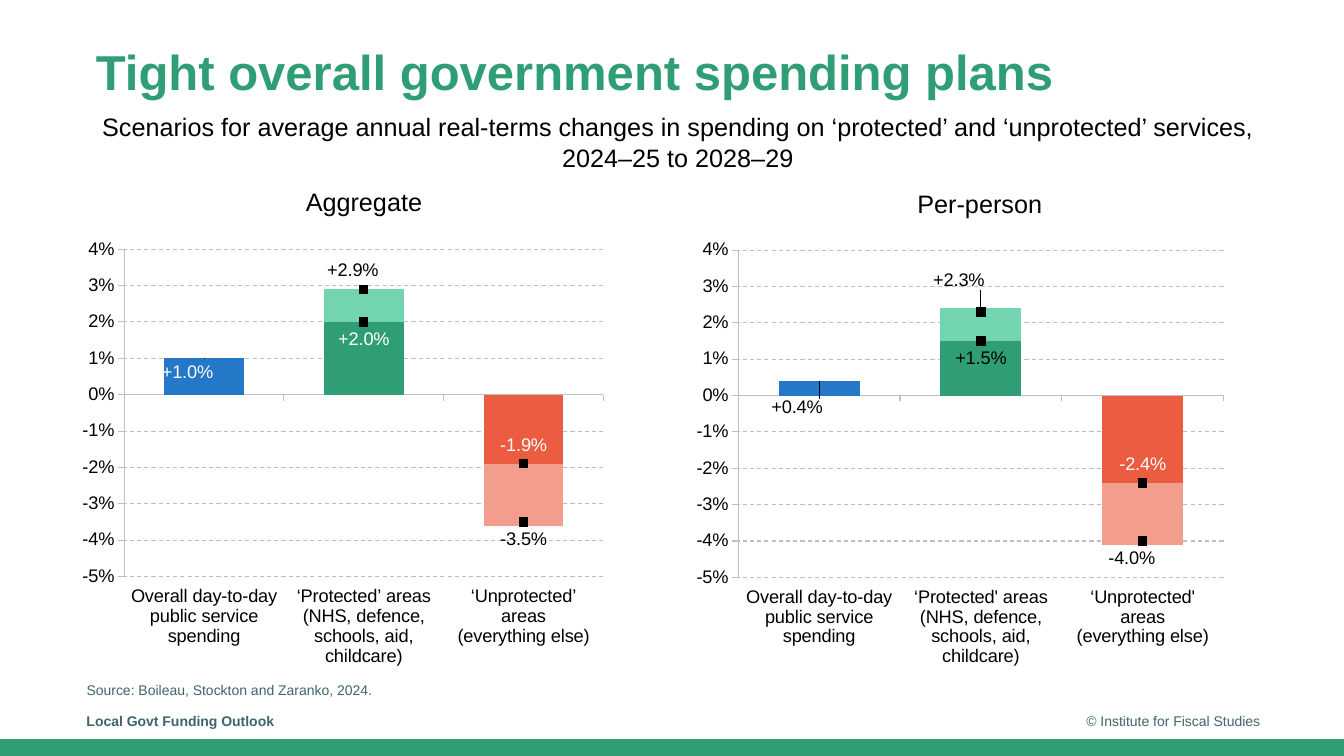
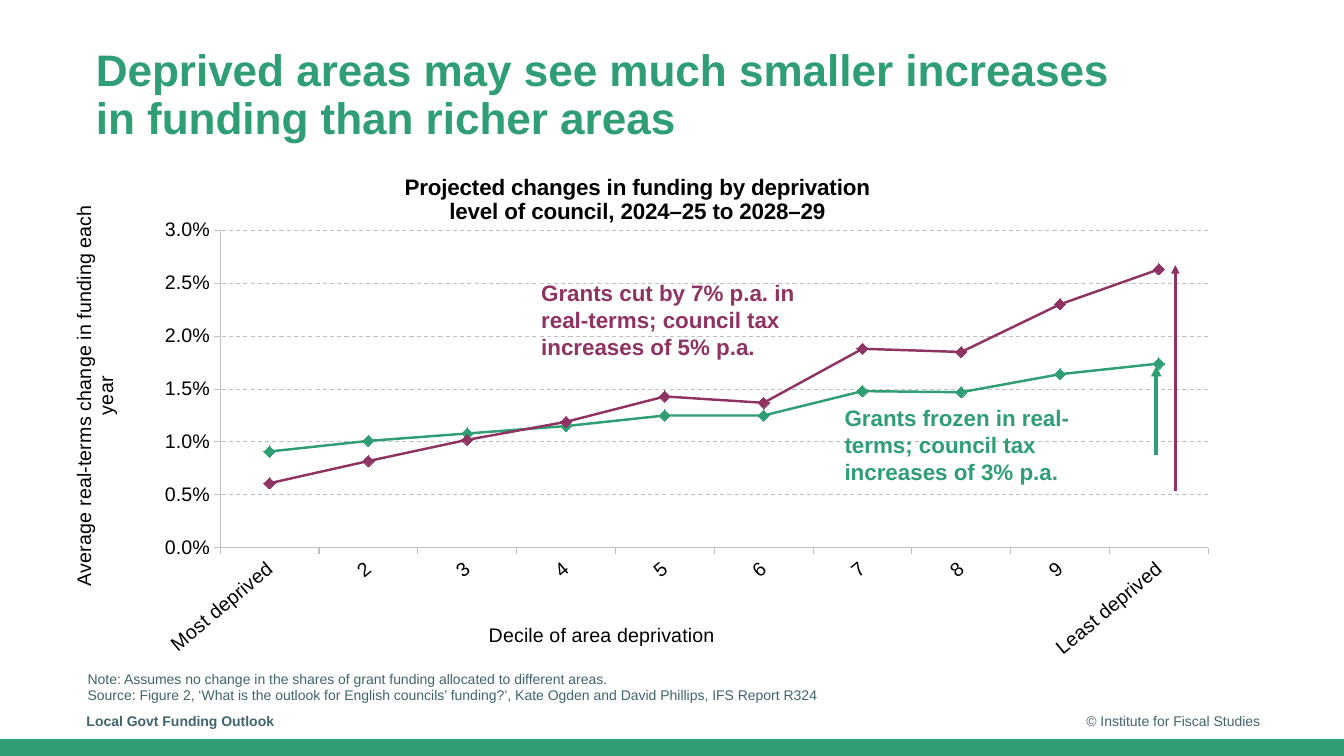
from lxml import etree
from pptx import Presentation
from pptx.chart.data import CategoryChartData
from pptx.dml.color import RGBColor
from pptx.enum.chart import (XL_CHART_TYPE, XL_LABEL_POSITION, XL_MARKER_STYLE,
                             XL_TICK_LABEL_POSITION, XL_TICK_MARK)
from pptx.enum.dml import MSO_LINE
from pptx.enum.shapes import MSO_CONNECTOR, MSO_SHAPE
from pptx.enum.text import MSO_ANCHOR, MSO_AUTO_SIZE, PP_ALIGN
from pptx.oxml import parse_xml
from pptx.oxml.ns import nsdecls, qn
from pptx.util import Inches, Pt

STACKED, LINES = XL_CHART_TYPE.COLUMN_STACKED, XL_CHART_TYPE.LINE_MARKERS
ABOVE, BELOW = XL_LABEL_POSITION.ABOVE, XL_LABEL_POSITION.BELOW
SQUARE, DIAMOND, NO_MARKER = XL_MARKER_STYLE.SQUARE, XL_MARKER_STYLE.DIAMOND, XL_MARKER_STYLE.NONE
LOW, OUTSIDE, DASH = XL_TICK_LABEL_POSITION.LOW, XL_TICK_MARK.OUTSIDE, MSO_LINE.DASH
STRAIGHT, RECT = MSO_CONNECTOR.STRAIGHT, MSO_SHAPE.RECTANGLE
TOP, MIDDLE, FIXED = MSO_ANCHOR.TOP, MSO_ANCHOR.MIDDLE, MSO_AUTO_SIZE.NONE
LEFT, CENTER, RIGHT = PP_ALIGN.LEFT, PP_ALIGN.CENTER, PP_ALIGN.RIGHT

FONT = "Arial"
GREEN, PURPLE, SLATE = "309E75", "8F3363", "40646D"
BLUE, ORANGE, MINT, SALMON = "2478C7", "EB5C40", "73D4B0", "F39D8C"
BLACK, WHITE, GREY = "000000", "FFFFFF", "BFBFBF"
W, H = Inches(13.33), Inches(7.5)


def rgb(c):
    return RGBColor.from_string(c)


def box(x, y, w, h):
    """Percent shares of the slide as left, top, width, height."""
    return [round(v * side / 100) for v, side in ((x, W), (y, H), (w, W), (h, H))]


def paint(fill, c):
    fill.solid()
    fill.fore_color.rgb = rgb(c)


def style_font(font, size, color=BLACK, bold=False):
    font.name, font.size, font.bold = FONT, Pt(size), bold
    font.color.rgb = rgb(color)


def write(tf, text, size, color=BLACK, bold=False, align=None, spacing=None):
    for i, line in enumerate(text.split("\n")):
        p = tf.add_paragraph() if i else tf.paragraphs[0]
        p.text = line
        if align is not None:
            p.alignment = align
        if spacing is not None:
            p.line_spacing = spacing
        for r in p.runs:
            style_font(r.font, size, color, bold)


def add_text(s, area, text, size, anchor=TOP, wrap=True, **fmt):
    tf = s.shapes.add_textbox(*box(*area)).text_frame
    tf.word_wrap, tf.vertical_anchor = wrap, anchor
    write(tf, text, size, **fmt)


def add_band(s, layout):
    sp = s.shapes.add_shape(RECT, *box(0, 97.77, 100, 2.23))
    sp.shadow.inherit = False
    paint(sp.fill, GREEN)
    sp.line.fill.background()
    layout.shapes.element.append(sp.element)


def add_slide(prs, layout, title, size):
    s = prs.slides.add_slide(layout)
    sp = s.shapes.title
    sp.left, sp.top, sp.width, sp.height = box(6.38, 5.73, 79.4, 8.4)
    tf = sp.text_frame
    tf.word_wrap, tf.auto_size, tf.vertical_anchor = True, FIXED, TOP
    write(tf, title, size, color=GREEN, bold=True, align=LEFT, spacing=0.9)
    add_text(s, (5.7, 92.67, 66.3, 5.33), "Local Govt Funding Outlook", 10,
             anchor=MIDDLE, color=SLATE, bold=True)
    add_text(s, (72, 92.67, 22.5, 5.33), "© Institute for Fiscal Studies", 10,
             anchor=MIDDLE, color=SLATE, align=RIGHT)
    return s


def add_arrow(s, x, y1, y2, color, width):
    left, top, _, rise = box(x, y1, 0, y2)
    c = s.shapes.add_connector(STRAIGHT, left, top, left, rise)
    c.line.color.rgb, c.line.width = rgb(color), Pt(width)
    ln = c.element.xpath(".//a:ln")[0]
    etree.SubElement(ln, qn("a:tailEnd"), type="triangle")
    etree.SubElement(ln.getparent(), qn("a:effectLst"))


def place(parent, index=1, target=None, mode="edge", **shares):
    for old in parent.findall(qn("c:layout")):
        parent.remove(old)
    layout = parse_xml(f"<c:layout {nsdecls('c')}><c:manualLayout/></c:layout>")
    values = {"layoutTarget": target, "xMode": mode, "yMode": mode, **shares}
    for tag, value in values.items():
        if value is not None:
            etree.SubElement(layout[0], qn(f"c:{tag}"), val=str(value))
    parent.insert(index, layout)


def style_axis(axis, size):
    axis.major_tick_mark = OUTSIDE
    axis.format.line.color.rgb, axis.format.line.width = rgb(GREY), Pt(0.75)
    style_font(axis.tick_labels.font, size)


def add_chart(s, kind, area, cats, series, plot, size, scale, fmt):
    data = CategoryChartData()
    data.categories = cats
    for i, values in enumerate(series, 1):
        data.add_series(f"Series {i}", values)
    chart = s.shapes.add_chart(kind, *box(*area), data).chart
    chart.has_legend = chart.has_title = False
    chart.plots[0].vary_by_categories = False
    style_font(chart.font, size)
    cat, val = chart.category_axis, chart.value_axis
    for axis in (cat, val):
        style_axis(axis, size)
    cat.tick_label_position = LOW
    val.minimum_scale, val.maximum_scale, val.major_unit = scale
    val.tick_labels.number_format, val.tick_labels.number_format_is_linked = fmt, False
    grid = val.major_gridlines.format.line
    grid.color.rgb, grid.width, grid.dash_style = rgb(GREY), Pt(0.75), DASH
    place(chart.element.xpath("c:chart/c:plotArea")[0], 0, "inner",
          **dict(zip("xywh", plot)))
    return chart


def style_marker(ser, style, size, color):
    ser.smooth = False
    ser.marker.style, ser.marker.size = style, size
    paint(ser.marker.format.fill, color)
    paint(ser.marker.format.line.fill, color)


def split_lines(chart, first):
    """Turn the series from number `first` on into a line plot on the same axes."""
    bar = chart.element.xpath(".//c:barChart")[0]
    line = parse_xml(f'<c:lineChart {nsdecls("c")}><c:grouping val="standard"/>'
                     '<c:varyColors val="0"/></c:lineChart>')
    for ser in bar.findall(qn("c:ser"))[first:]:
        for flag in ser.findall(qn("c:invertIfNegative")):
            ser.remove(flag)
        line.append(ser)
    etree.SubElement(line, qn("c:marker"), val="1")
    for axis in bar.findall(qn("c:axId")):
        etree.SubElement(line, qn("c:axId"), val=axis.get("val"))
    bar.addnext(line)


def add_label(chart, ser, point, text, position, color=BLACK, dx=0, dy=0):
    label = chart.plots[1].series[ser].points[point].data_label
    write(label.text_frame, text, 13, color=color)
    label.position = position
    if dx or dy:
        node = chart.element.xpath(
            f'.//c:lineChart/c:ser[{ser + 1}]//c:dLbl[c:idx/@val="{point}"]')[0]
        place(node, mode=None, x=dx, y=dy)


def add_scenarios(s, x, cats, series, plot, labels):
    chart = add_chart(s, STACKED, (x, 31.47, 41.18, 57.73), cats, series, plot,
                      13, (-0.05, 0.04, 0.01), "0%")
    split_lines(chart, 2)
    bars, marks = chart.plots
    bars.gap_width, bars.overlap = 100, 100
    for ser, color, points in zip(bars.series, (GREEN, MINT),
                                  ({0: BLUE, 2: ORANGE}, {2: SALMON})):
        ser.invert_if_negative = False
        paint(ser.format.fill, color)
        for i, c in points.items():
            paint(ser.points[i].format.fill, c)
    for ser in marks.series:
        ser.format.line.fill.background()
        style_marker(ser, SQUARE, 6, BLACK)
        ser.points[0].marker.style = NO_MARKER
        ser.data_labels.show_value = False
    for label in labels:
        add_label(chart, **label)


def add_title(owner, chart, query, text, size, x, y, bold=False):
    owner.has_title = True
    title = owner.chart_title if owner is chart else owner.axis_title
    write(title.text_frame, text, size, bold=bold)
    place(chart.element.xpath(f"{query}/c:title")[0], x=x, y=y)


def build_spending(s):
    add_text(s, (6.38, 14.13, 88.1, 9.47),
             "Scenarios for average annual real-terms changes in spending on ‘protected’ "
             "and ‘unprotected’ services, 2024–25 to 2028–29", 18, align=CENTER)
    add_text(s, (18.68, 24, 16.8, 5.33), "Aggregate", 18, align=CENTER)
    add_text(s, (64.5, 24.27, 16.8, 5.33), "Per-person", 18, align=CENTER)
    add_text(s, (5.7, 89.47, 22.88, 3.6), "Source: Boileau, Stockton and Zaranko, 2024.",
             10, wrap=False, color=SLATE, spacing=Pt(12))

    def cats(quote):
        return ["Overall day-to-day public service spending",
                f"‘Protected{quote} areas\n(NHS, defence, schools, aid, childcare)",
                f"‘Unprotected{quote} areas\n(everything else)"]

    def label(ser, point, text, position, **fmt):
        return dict(ser=ser, point=point, text=text, position=position, **fmt)

    extra = (None, 0.009, -0.017)
    low = (0.01, 0.02, -0.019)
    add_scenarios(s, 4.42, cats("’"), [low, extra, low, (0.01, 0.029, -0.035)],
                  (0.117, 0.026, 0.866, 0.75), [
        label(0, 0, "+1.0%", BELOW, color=WHITE, dx=-0.03),
        label(0, 1, "+2.0%", BELOW, color=WHITE),
        label(0, 2, "-1.9%", ABOVE, color=WHITE),
        label(1, 1, "+2.9%", ABOVE, dx=-0.02),
        label(1, 2, "-3.5%", BELOW)])
    low = (0.004, 0.015, -0.024)
    add_scenarios(s, 50.03, cats("'"), [low, extra, low, (0.004, 0.023, -0.04)],
                  (0.119, 0.028, 0.877, 0.75), [
        label(0, 0, "+0.4%", BELOW, dx=-0.04, dy=0.03),
        label(0, 1, "+1.5%", BELOW),
        label(0, 2, "-2.4%", ABOVE, color=WHITE),
        label(1, 1, "+2.3%", ABOVE, dx=-0.04, dy=-0.03),
        label(1, 2, "-4.0%", BELOW, dx=-0.02)])


def build_deprivation(s):
    add_text(s, (5.78, 86.53, 57.53, 8.67),
             "Note: Assumes no change in the shares of grant funding allocated to "
             "different areas.\nSource: Figure 2, ‘What is the outlook for English "
             "councils’ funding?’, Kate Ogden and David Phillips, IFS Report R324",
             10, anchor=MIDDLE, color=SLATE)
    cats = ["Most deprived", *map(str, range(2, 10)), "Least deprived"]
    frozen = (0.0091, 0.0101, 0.0108, 0.0115, 0.0125, 0.0125, 0.0148, 0.0147, 0.0164, 0.0174)
    cut = (0.0061, 0.0082, 0.0102, 0.0119, 0.0143, 0.0137, 0.0188, 0.0185, 0.023, 0.0263)
    chart = add_chart(s, LINES, (4.13, 21.87, 88.8, 68.13), cats, [frozen, cut],
                      (0.138, 0.126, 0.828, 0.617), 14, (0, 0.03, 0.005), "0.0%")
    for ser, color in zip(chart.plots[0].series, (GREEN, PURPLE)):
        ser.format.line.color.rgb, ser.format.line.width = rgb(color), Pt(1.75)
        style_marker(ser, DIAMOND, 8, color)
    chart.element.xpath(".//c:catAx/c:txPr/a:bodyPr")[0].set("rot", "-2400000")
    add_title(chart, chart, "c:chart", "Projected changes in funding by deprivation\v"
              "level of council, 2024–25 to 2028–29", 16, 0.29, 0.01, bold=True)
    add_title(chart.category_axis, chart, ".//c:catAx",
              "Decile of area deprivation", 14, 0.36, 0.88)
    add_title(chart.value_axis, chart, ".//c:valAx",
              "Average real-terms change in funding each year", 14, 0.01, 0.07)
    add_text(s, (62.1, 52.8, 19.58, 12.13), "Grants frozen in real-terms; council tax "
             "increases of 3% p.a.", 16, color=GREEN, bold=True)
    add_text(s, (39.53, 36.27, 20.93, 12.13), "Grants cut by 7% p.a. in real-terms; "
             "council tax increases of 5% p.a.", 16, color=PURPLE, bold=True)
    add_arrow(s, 86.03, 60.13, 48.4, GREEN, 2.5)
    add_arrow(s, 87.45, 64.93, 35.07, PURPLE, 2)


def main():
    prs = Presentation()
    prs.slide_width, prs.slide_height = W, H
    layout = prs.slide_layouts[5]
    s = add_slide(prs, layout, "Tight overall government spending plans", 35)
    add_band(s, layout)
    build_spending(s)
    build_deprivation(add_slide(prs, layout, "Deprived areas may see much smaller increases "
                                "in funding than richer areas", 31.5))
    prs.save("out.pptx")


if __name__ == "__main__":
    main()
